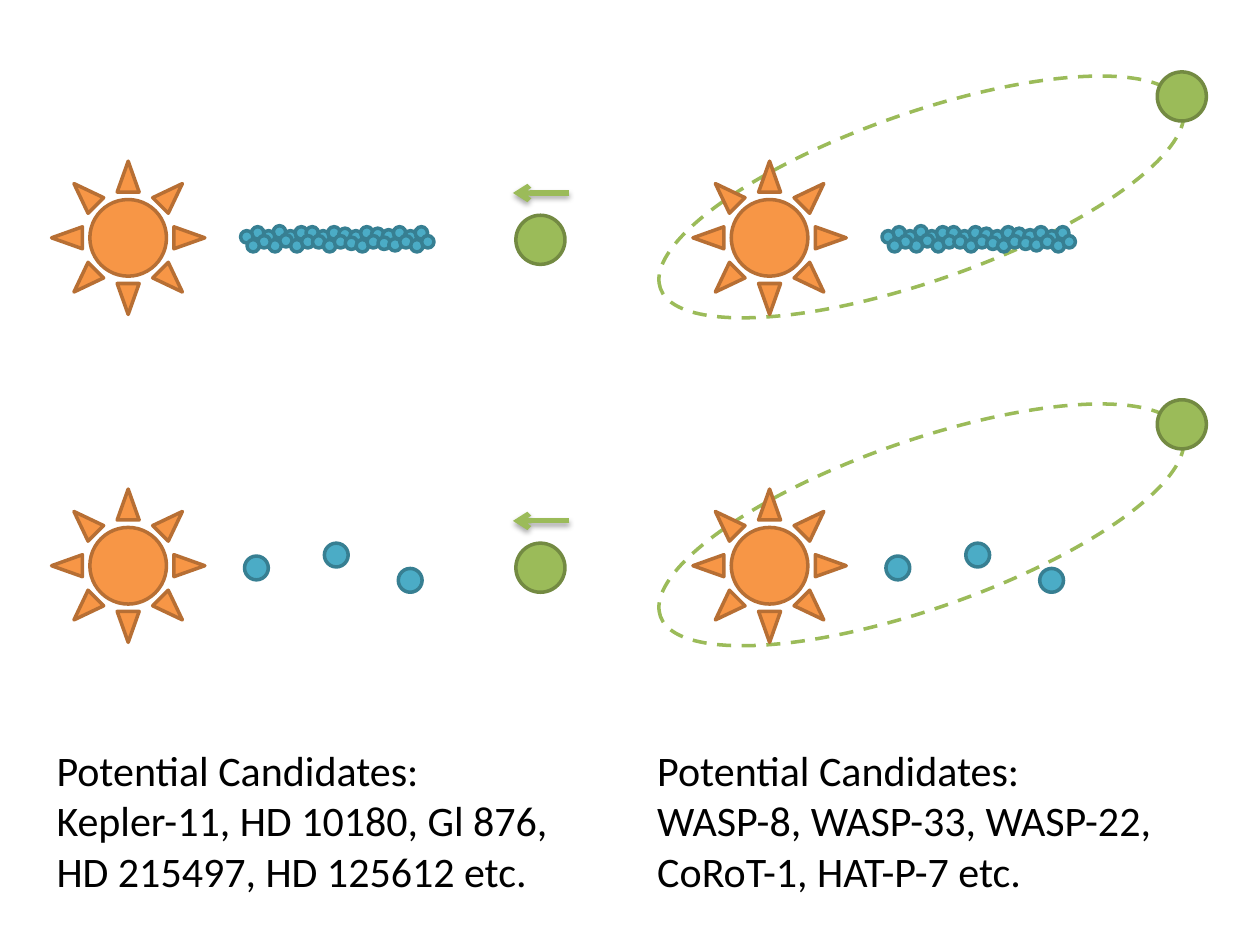
from lxml import etree
from pptx import Presentation
from pptx import util as u
from pptx.dml.color import RGBColor
from pptx.enum import dml, shapes, text
from pptx.oxml import ns

SUN, SUN_EDGE = RGBColor(0xF7, 0x96, 0x46), RGBColor(0xB7, 0x6F, 0x34)
ROCK, ROCK_EDGE = RGBColor(0x4B, 0xAC, 0xC6), RGBColor(0x37, 0x7F, 0x92)
GIANT, GIANT_EDGE = RGBColor(0x9B, 0xBB, 0x59), RGBColor(0x73, 0x8A, 0x42)
BLACK = RGBColor(0, 0, 0)
OVAL = shapes.MSO_SHAPE.OVAL

LEFTS, TOPS = (1.04, 13.97), (3.25, 9.86)
BEAD_TOPS = (1.4, 1.32, 1.4, 1.3, 1.4, 1.32, 1.32, 1.4, 1.32,
             1.35, 1.4, 1.32, 1.35, 1.38, 1.32, 1.4, 1.32)
BEAD_ORDER = (*range(3, 16), 2, 1, 0, 16)
BEAD_PITCH = 0.22
PLANETS = ((3.89, 1.35), (5.5, 1.09), (6.99, 1.6))
CANDIDATES = (
    (0.89, "Potential Candidates:\vKepler-11, HD 10180, Gl 876, HD 215497, HD 125612 etc."),
    (13.0, "Potential Candidates:\vWASP-8, WASP-33, WASP-22, CoRoT-1, HAT-P-7 etc."),
)


def add_body(g, kind, x, y, w, h, fill, edge):
    sp = g.shapes.add_shape(kind, u.Cm(x), u.Cm(y), u.Cm(w), u.Cm(h))
    sp.shadow.inherit = False
    if fill is None:
        sp.fill.background()
    else:
        sp.fill.solid()
        sp.fill.fore_color.rgb = fill
    sp.line.color.rgb = edge
    sp.line.width = u.Pt(2)
    return sp


def add_orbit(g, x, y):
    sp = add_body(g, OVAL, x - 0.97, y - 0.97, 11.15, 3.38, None, GIANT)
    sp.rotation = 340.7
    sp.line.dash_style = dml.MSO_LINE.DASH


def add_disk(g, x, y):
    for dx, dy in ((0, 0), (0.13, 0.18)):
        for i in BEAD_ORDER:
            add_body(g, OVAL, x + 3.81 + i * BEAD_PITCH + dx, y + BEAD_TOPS[i] + dy,
                     0.25, 0.25, ROCK, ROCK_EDGE)


def add_planets(g, x, y):
    for dx, dy in PLANETS:
        add_body(g, OVAL, x + dx, y + dy, 0.48, 0.48, ROCK, ROCK_EDGE)


def add_arrow(g, x, y):
    cx = g.shapes.add_connector(shapes.MSO_CONNECTOR.STRAIGHT, u.Cm(x + 10.44),
                                u.Cm(y + 0.64), u.Cm(x + 9.3), u.Cm(y + 0.64))
    cx.line.color.rgb = GIANT
    cx.line.width = u.Pt(3)
    etree.SubElement(cx.line._get_or_add_ln(), ns.qn("a:tailEnd"), type="arrow")
    effects = etree.SubElement(cx._element.spPr, ns.qn("a:effectLst"))
    shadow = etree.SubElement(effects, ns.qn("a:outerShdw"), blurRad="40000",
                              dist="23000", dir="5400000", rotWithShape="0")
    color = etree.SubElement(shadow, ns.qn("a:srgbClr"), val=str(BLACK))
    etree.SubElement(color, ns.qn("a:alpha"), val="35000")


def add_system(s, x, y, add_inner, inclined):
    g = s.shapes.add_group_shape()
    if inclined:
        add_orbit(g, x, y)
    add_body(g, shapes.MSO_SHAPE.SUN, x, y, 3.09, 3.09, SUN, SUN_EDGE)
    giant_y = y - 1.8 if inclined else y + 1.09
    add_body(g, OVAL, x + 9.36, giant_y, 0.99, 0.99, GIANT, GIANT_EDGE)
    add_inner(g, x, y)
    if not inclined:
        add_arrow(g, x, y)


def add_candidates(s, x, y, words):
    tb = s.shapes.add_textbox(u.Cm(x), u.Cm(y), u.Cm(11.15), u.Cm(3.33))
    tf = tb.text_frame
    tf.word_wrap = True
    tf.auto_size = text.MSO_AUTO_SIZE.SHAPE_TO_FIT_TEXT
    p = tf.paragraphs[0]
    p.text = words
    for r in p.runs:
        r.font.name = "Calibri"
        r.font.size = u.Pt(24)
        r.font.color.rgb = BLACK


def main():
    prs = Presentation()
    prs.slide_width, prs.slide_height = u.Cm(25.4), u.Cm(19.05)
    s = prs.slides.add_slide(prs.slide_layouts[6])
    for x, inclined in zip(LEFTS, (False, True)):
        for y, add_inner in zip(TOPS, (add_disk, add_planets)):
            add_system(s, x, y, add_inner, inclined)
    for x, words in CANDIDATES:
        add_candidates(s, x, 14.88, words)
    prs.save("out.pptx")


if __name__ == "__main__":
    main()
